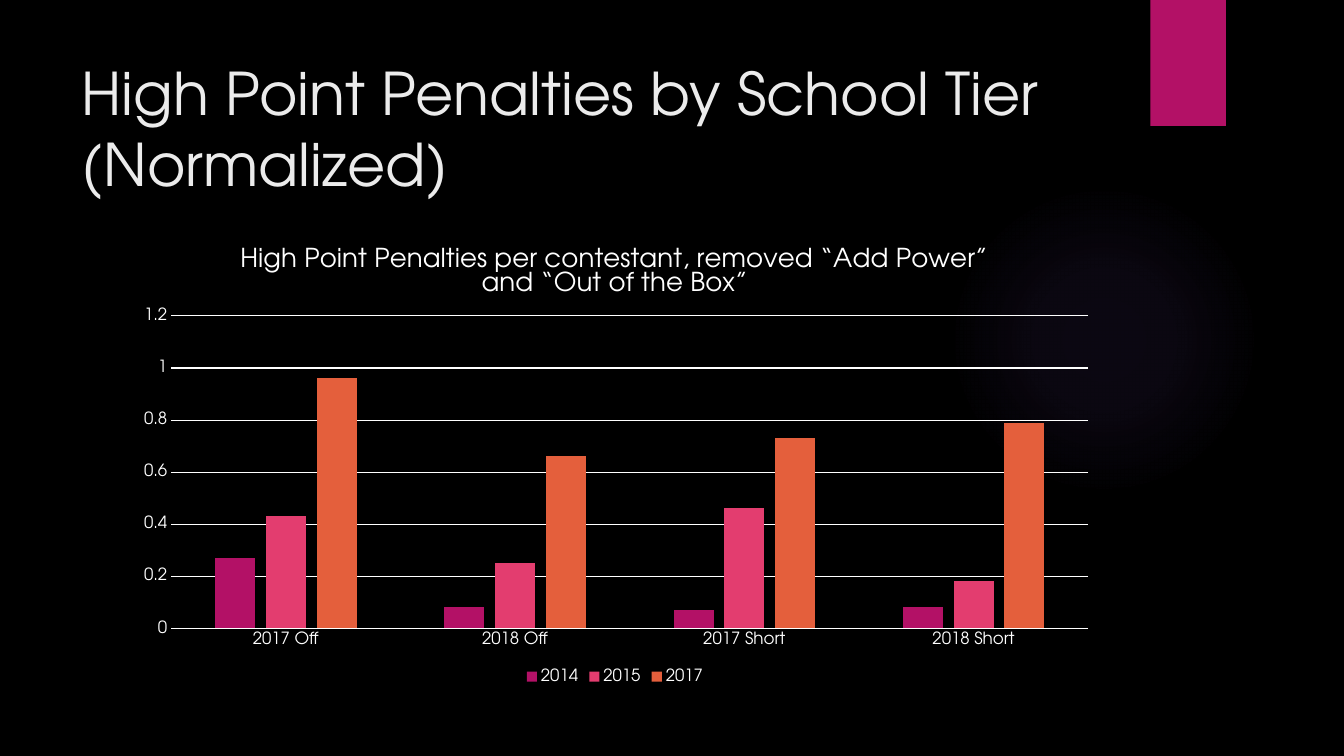
from dataclasses import dataclass

from lxml import etree
from pptx import Presentation
from pptx.chart.data import CategoryChartData
from pptx.dml.color import RGBColor
from pptx.enum.chart import XL_CHART_TYPE, XL_LEGEND_POSITION, XL_TICK_MARK
from pptx.enum.shapes import MSO_SHAPE
from pptx.enum.text import MSO_ANCHOR, MSO_AUTO_SIZE, PP_ALIGN
from pptx.oxml import parse_xml
from pptx.oxml.ns import nsdecls, qn
from pptx.util import Inches, Pt


@dataclass(frozen=True)
class Theme:
    font: str = "TeX Gyre Adventor"
    background: str = "000000"
    title: str = "EBEBEB"
    chart_text: str = "FFFFFF"
    accent: str = "B31166"
    glow: str = "9B6BF2"
    series: tuple = ("B31166", "E33D6F", "E45F3C")
    title_size: float = 42
    chart_title_size: float = 18.6
    label_size: float = 12
    line_width: float = 0.75


theme = Theme()


def style_font(font, size, color):
    font.name = theme.font
    font.size = Pt(size)
    font.bold = False
    font.color.rgb = RGBColor.from_string(color)


def style_line(line):
    line.color.rgb = RGBColor.from_string(theme.chart_text)
    line.width = Pt(theme.line_width)


presentation = Presentation()
presentation.slide_width = Inches(13.33)
presentation.slide_height = Inches(7.5)
slide = presentation.slides.add_slide(presentation.slide_layouts[5])
slide.background.fill.solid()
slide.background.fill.fore_color.rgb = RGBColor.from_string(theme.background)

# Soft glow and accent tab
glow = slide.shapes.add_shape(
    MSO_SHAPE.OVAL, Inches(9.41), Inches(1.83), Inches(3.08), Inches(3.08))
glow.shadow.inherit = False
glow.line.fill.background()
stops = "".join(
    f'<a:gs pos="{position * 1000}"><a:srgbClr val="{theme.glow}">'
    f'<a:alpha val="{opacity * 1000}"/></a:srgbClr></a:gs>'
    for position, opacity in ((0, 7), (36, 6), (69, 0), (100, 0)))
glow_fill = parse_xml(
    f'<a:gradFill {nsdecls("a")} rotWithShape="1"><a:gsLst>{stops}</a:gsLst>'
    '<a:path path="circle"><a:fillToRect l="50000" t="50000" r="50000" b="50000"/>'
    '</a:path></a:gradFill>')
glow._element.spPr.find(qn("a:prstGeom")).addnext(glow_fill)

tab = slide.shapes.add_shape(
    MSO_SHAPE.RECTANGLE, Inches(11.41), 0, Inches(0.75), Inches(1.25))
tab.shadow.inherit = False
tab.fill.solid()
tab.fill.fore_color.rgb = RGBColor.from_string(theme.accent)
tab.line.fill.background()

# Title, in front of the decoration
title = slide.shapes.title
slide.shapes._spTree.append(title._element)
title.left, title.top = Inches(0.71), Inches(0.5)
title.width, title.height = Inches(10.29), Inches(1.53)
title_frame = title.text_frame
title_frame.text = "High Point Penalties by School Tier\v(Normalized)"
title_frame.word_wrap = True
title_frame.auto_size = MSO_AUTO_SIZE.NONE
title_frame.vertical_anchor = MSO_ANCHOR.MIDDLE
title_paragraph = title_frame.paragraphs[0]
title_paragraph.alignment = PP_ALIGN.LEFT
for run in title_paragraph.runs:
    style_font(run.font, theme.title_size, theme.title)

# Chart
chart_data = CategoryChartData()
chart_data.categories = ["2017 Off", "2018 Off", "2017 Short", "2018 Short"]
chart_data.add_series("2014", (0.27, 0.08, 0.07, 0.08))
chart_data.add_series("2015", (0.43, 0.25, 0.46, 0.18))
chart_data.add_series("2017", (0.96, 0.66, 0.73, 0.79))
chart = slide.shapes.add_chart(
    XL_CHART_TYPE.COLUMN_CLUSTERED, Inches(1.21), Inches(2.24),
    Inches(9.78), Inches(4.59), chart_data).chart
style_font(chart.font, theme.label_size, theme.chart_text)

chart.has_title = True
chart.chart_title.include_in_layout = False
chart_title_frame = chart.chart_title.text_frame
chart_title_frame.text = (
    "High Point Penalties per contestant, removed “Add Power” and “Out of the Box”")
style_font(chart_title_frame.paragraphs[0].runs[0].font,
           theme.chart_title_size, theme.chart_text)

chart.has_legend = True
chart.legend.position = XL_LEGEND_POSITION.BOTTOM
chart.legend.include_in_layout = False
style_font(chart.legend.font, theme.label_size, theme.chart_text)

for axis in (chart.category_axis, chart.value_axis):
    axis.major_tick_mark = XL_TICK_MARK.NONE
    axis.minor_tick_mark = XL_TICK_MARK.NONE
    style_font(axis.tick_labels.font, theme.label_size, theme.chart_text)
style_line(chart.category_axis.format.line)
value_axis = chart.value_axis
value_axis.minimum_scale, value_axis.maximum_scale = 0, 1.2
value_axis.major_unit = 0.2
value_axis.format.line.fill.background()
value_axis.has_major_gridlines = True
style_line(value_axis.major_gridlines.format.line)

plot = chart.plots[0]
plot.vary_by_categories = False
plot.gap_width, plot.overlap = 219, -27
for series, color in zip(plot.series, theme.series):
    series.format.fill.solid()
    series.format.fill.fore_color.rgb = RGBColor.from_string(color)

# Plot area as shares of the chart's size
plot_area = chart._chartSpace.chart.plotArea
for old_layout in plot_area.findall(qn("c:layout")):
    plot_area.remove(old_layout)
layout = etree.Element(qn("c:layout"))
manual_layout = etree.SubElement(layout, qn("c:manualLayout"))
for name, value in (("layoutTarget", "inner"), ("xMode", "edge"), ("yMode", "edge"),
                    ("x", 0.05), ("y", 0.195), ("w", 0.93), ("h", 0.675)):
    etree.SubElement(manual_layout, qn(f"c:{name}")).set("val", str(value))
plot_area.insert(0, layout)

presentation.save("out.pptx")
